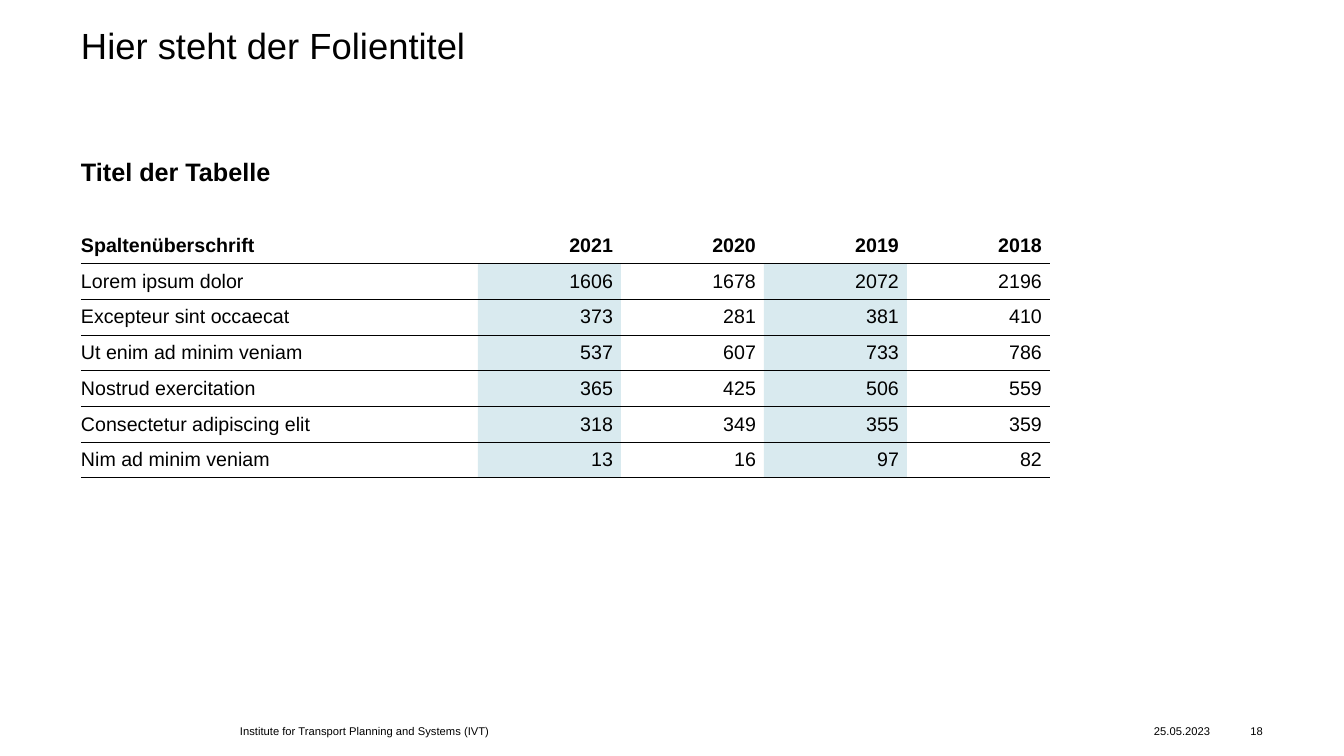
from dataclasses import dataclass

from lxml.etree import SubElement
from pptx import Presentation
from pptx.dml.color import RGBColor
from pptx.enum.text import MSO_ANCHOR as Anchor, MSO_AUTO_SIZE as AutoSize, PP_ALIGN as Align
from pptx.oxml.ns import qn
from pptx.slide import Slide
from pptx.table import Table, _Cell as Cell
from pptx.text.text import TextFrame
from pptx.util import Emu, Pt

PX_PER_INCH = 100.8
FONT = "Arial"
COLORS = {"ink": "000000", "paper": "FFFFFF", "accent": "007894"}
ACCENT_OPACITY = 15


@dataclass(frozen=True)
class Label:
    text: str
    left: int
    top: int
    width: int
    height: int
    size: int
    bold: bool = False
    align: Align = Align.LEFT
    anchor: Anchor = Anchor.MIDDLE


@dataclass(frozen=True)
class Row:
    name: str
    values: tuple[int, ...]


TITLE = Label("Hier steht der Folientitel", 81, 28, 1182, 99, 26, anchor=Anchor.TOP)
LABELS = [
    Label("Titel der Tabelle", 81, 156, 1182, 43, 18, bold=True, anchor=Anchor.TOP),
    Label("Institute for Transport Planning and Systems (IVT)", 240, 719, 596, 24, 8),
    Label("25.05.2023", 1154, 719, 68, 24, 8),
    Label("18", 1228, 719, 35, 24, 8, align=Align.RIGHT),
]
ROWS = [
    Row("Spaltenüberschrift", (2021, 2020, 2019, 2018)),
    Row("Lorem ipsum dolor", (1606, 1678, 2072, 2196)),
    Row("Excepteur sint occaecat", (373, 281, 381, 410)),
    Row("Ut enim ad minim veniam", (537, 607, 733, 786)),
    Row("Nostrud exercitation", (365, 425, 506, 559)),
    Row("Consectetur adipiscing elit", (318, 349, 355, 359)),
    Row("Nim ad minim veniam", (13, 16, 97, 82)),
]
TABLE_LEFT, TABLE_TOP, TABLE_HEIGHT = 81, 228, 250
COLUMN_WIDTHS = [397, 143, 143, 143, 143]
CELL_RIGHT_MARGIN = 8


def px(length: int) -> Emu:
    return Emu(round(length * 914400 / PX_PER_INCH))


def rgb(name: str) -> RGBColor:
    return RGBColor.from_string(COLORS[name])


def write(frame: TextFrame, text: str, size: int, bold: bool, align: Align) -> None:
    para = frame.paragraphs[0]
    para.alignment = align
    span = para.add_run()
    span.text = text
    span.font.name = FONT
    span.font.size = Pt(size)
    span.font.bold = bold
    span.font.color.rgb = rgb("ink")


def fill_label(box, label: Label) -> None:
    """Place a text box or placeholder and write its label."""
    box.left, box.top = px(label.left), px(label.top)
    box.width, box.height = px(label.width), px(label.height)
    frame = box.text_frame
    frame.margin_left = frame.margin_top = frame.margin_right = frame.margin_bottom = 0
    frame.word_wrap = True
    frame.auto_size = AutoSize.NONE
    frame.vertical_anchor = label.anchor
    write(frame, label.text, label.size, label.bold, label.align)


def add_border(cell: Cell, side: str, width: float) -> None:
    """Draw one cell edge; a width of zero hides it."""
    line = SubElement(cell._tc.get_or_add_tcPr(), qn(f"a:ln{side}"), w=str(Pt(width)))
    if width:
        solid = SubElement(line, qn("a:solidFill"))
        SubElement(solid, qn("a:srgbClr"), val=COLORS["ink"])
    else:
        SubElement(line, qn("a:noFill"))


def rule_below(row: int) -> float:
    """Width in points of the rule under a row; row -1 is the table's top edge."""
    return {-1: 0, 0: 1}.get(row, 0.5)


def fill_cell(cell: Cell, text: str, row: int, column: int) -> None:
    cell.margin_left = cell.margin_top = cell.margin_bottom = 0
    cell.margin_right = px(CELL_RIGHT_MARGIN)
    cell.vertical_anchor = Anchor.MIDDLE
    write(cell.text_frame, text, 14, row == 0, Align.RIGHT if column else Align.LEFT)
    edges = {"L": 0, "R": 0, "T": rule_below(row - 1), "B": rule_below(row)}
    for side, width in edges.items():
        add_border(cell, side, width)
    if row == 0:
        cell.fill.background()
        return
    tinted = column % 2 == 1
    cell.fill.solid()
    cell.fill.fore_color.rgb = rgb("accent" if tinted else "paper")
    if tinted:
        color = cell._tc.tcPr.find(f"{qn('a:solidFill')}/{qn('a:srgbClr')}")
        SubElement(color, qn("a:alpha"), val=str(ACCENT_OPACITY * 1000))


def add_figures(page: Slide) -> Table:
    table = page.shapes.add_table(
        len(ROWS), len(COLUMN_WIDTHS), px(TABLE_LEFT), px(TABLE_TOP),
        px(sum(COLUMN_WIDTHS)), px(TABLE_HEIGHT),
    ).table
    table.first_row = table.horz_banding = False
    for column, width in zip(table.columns, COLUMN_WIDTHS):
        column.width = px(width)
    for r, row in enumerate(ROWS):
        table.rows[r].height = Emu(px(TABLE_HEIGHT) // len(ROWS))
        for c, content in enumerate((row.name, *row.values)):
            fill_cell(table.cell(r, c), str(content), r, c)
    return table


def main() -> None:
    deck = Presentation()
    deck.slide_width, deck.slide_height = px(1344), px(756)
    page = deck.slides.add_slide(deck.slide_layouts[5])
    page.background.fill.solid()
    page.background.fill.fore_color.rgb = rgb("paper")
    title = page.shapes.title
    fill_label(title, TITLE)
    title.text_frame.paragraphs[0].line_spacing = 0.9
    for label in LABELS:
        fill_label(page.shapes.add_textbox(0, 0, 0, 0), label)
    add_figures(page)
    deck.save("out.pptx")


if __name__ == "__main__":
    main()
